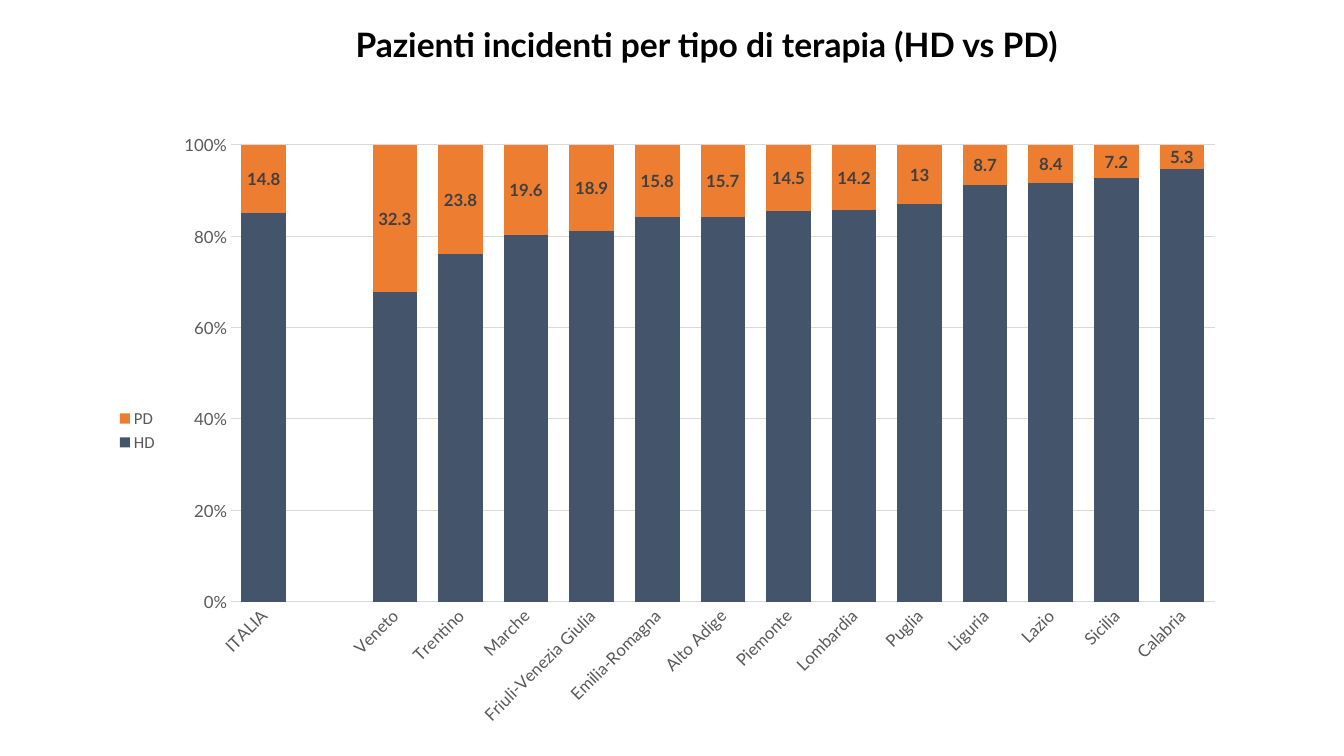
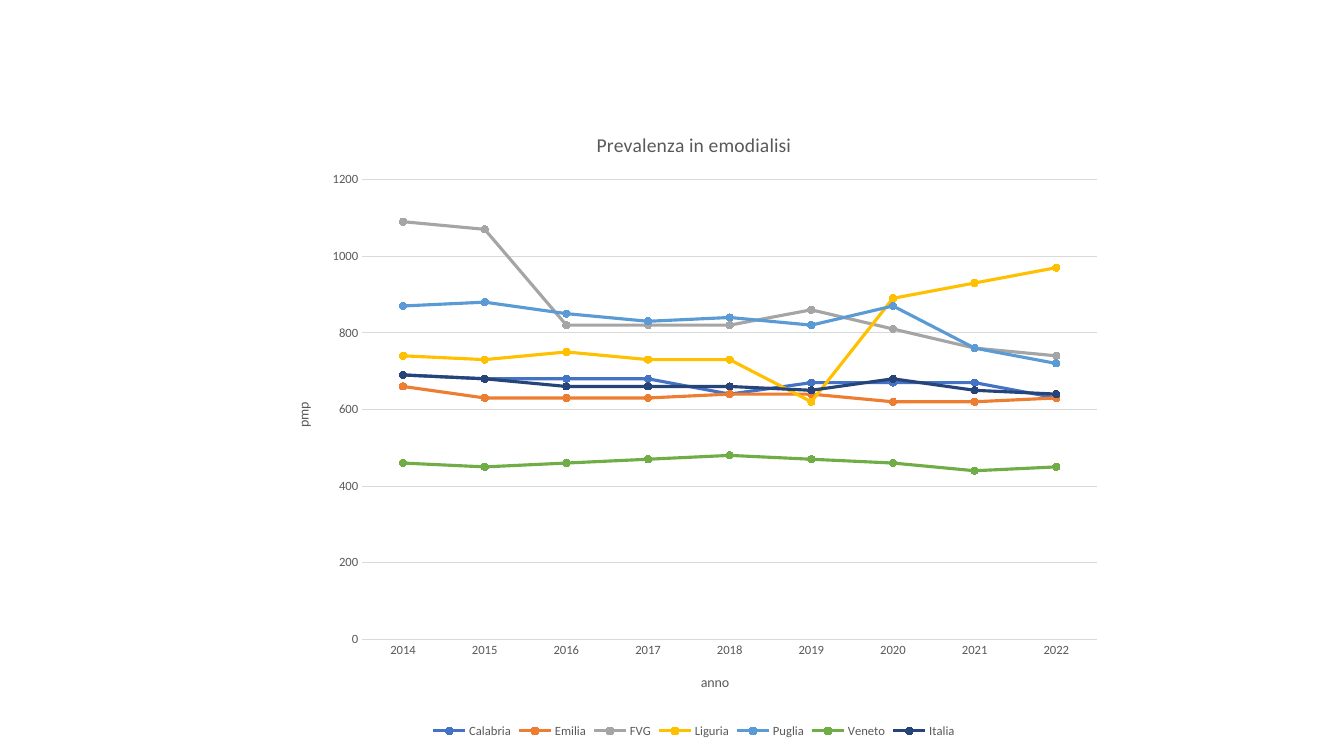
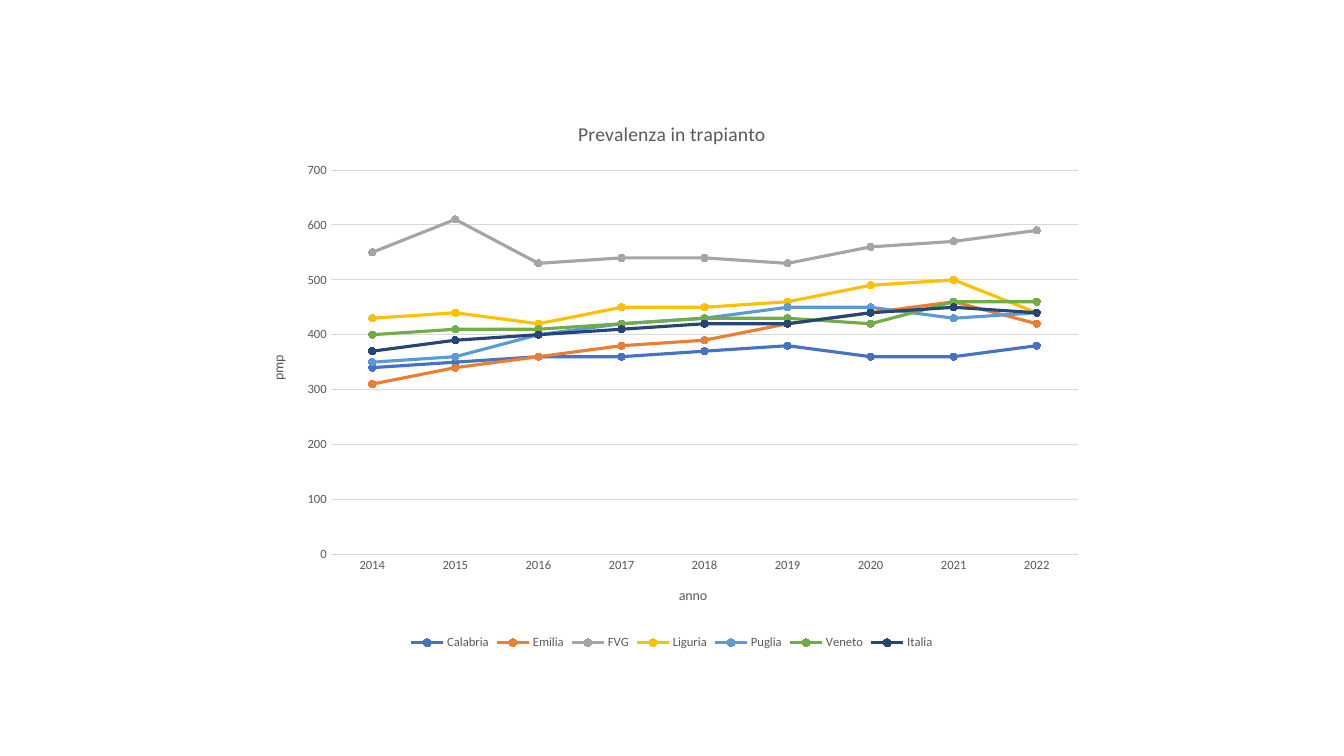
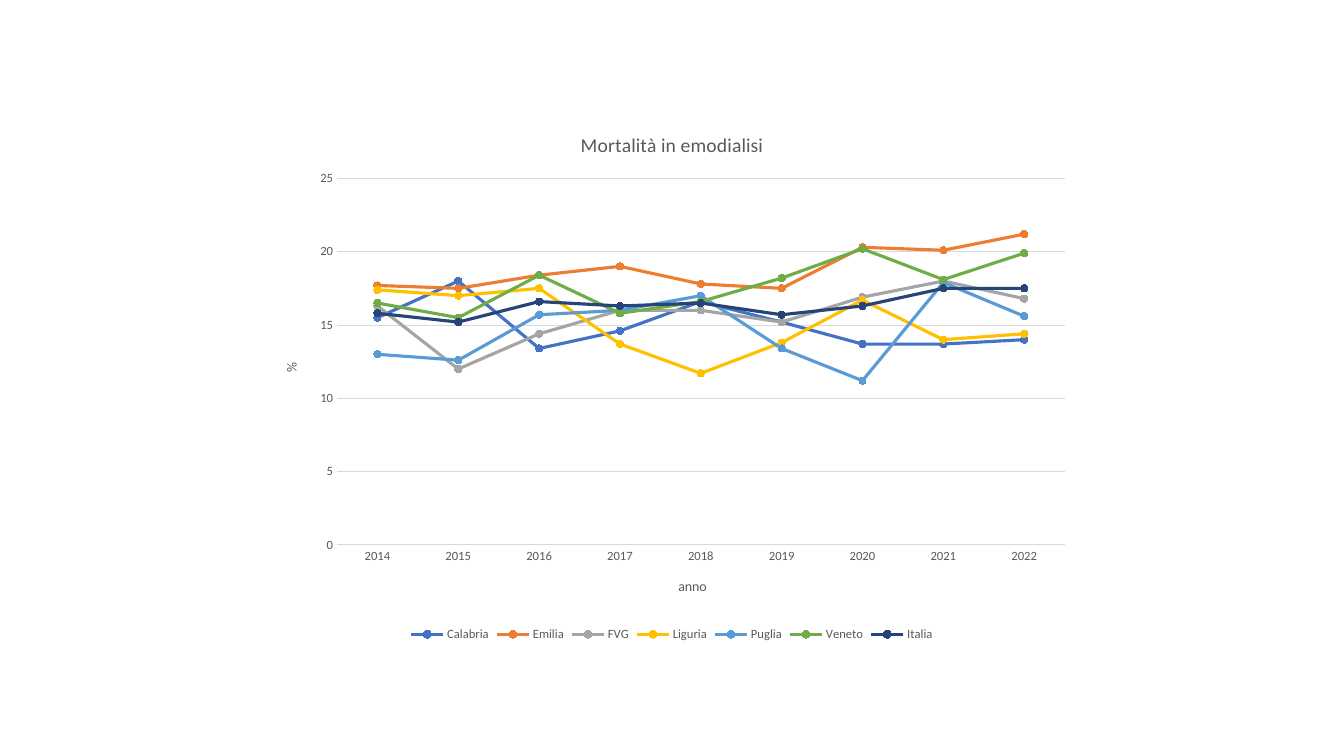
from lxml import etree
from pptx import Presentation
from pptx.chart.data import CategoryChartData
from pptx.dml.color import RGBColor
from pptx.enum.chart import XL_CHART_TYPE, XL_LEGEND_POSITION, XL_MARKER_STYLE, XL_TICK_MARK
from pptx.enum.text import MSO_AUTO_SIZE, PP_ALIGN
from pptx.oxml.ns import qn
from pptx.util import Emu, Pt

STACKED = XL_CHART_TYPE.COLUMN_STACKED_100
LINES = XL_CHART_TYPE.LINE_MARKERS
LEFT, BOTTOM = XL_LEGEND_POSITION.LEFT, XL_LEGEND_POSITION.BOTTOM
CIRCLE = XL_MARKER_STYLE.CIRCLE
NO_TICK = XL_TICK_MARK.NONE
GROW = MSO_AUTO_SIZE.SHAPE_TO_FIT_TEXT
ALIGN_LEFT = PP_ALIGN.LEFT

PX = 9525
TITLE_ONLY, BLANK = 5, 6
COLORS = {
    "title": "000000", "text": "595959", "label": "404040", "grid": "D9D9D9",
    "HD": "44546A", "PD": "ED7D31",
    "Calabria": "4472C4", "Emilia": "ED7D31", "FVG": "A5A5A5", "Liguria": "FFC000",
    "Puglia": "5B9BD5", "Veneto": "70AD47", "Italia": "264478",
}
YEARS = [str(year) for year in range(2014, 2023)]
AREAS = ["ITALIA", "", "Veneto", "Trentino", "Marche", "Friuli-Venezia Giulia",
         "Emilia-Romagna", "Alto Adige", "Piemonte", "Lombardia", "Puglia",
         "Liguria", "Lazio", "Sicilia", "Calabria"]
THERAPIES = {
    "HD": [85, None, 68, 76, 80, 81, 84, 84, 86, 86, 87, 91, 92, 93, 95],
    "PD": [14.8, None, 32.3, 23.8, 19.6, 18.9, 15.8, 15.7, 14.5, 14.2, 13, 8.7, 8.4, 7.2, 5.3],
}
DIALYSIS = {
    "Calabria": [690, 680, 680, 680, 640, 670, 670, 670, 630],
    "Emilia": [660, 630, 630, 630, 640, 640, 620, 620, 630],
    "FVG": [1090, 1070, 820, 820, 820, 860, 810, 760, 740],
    "Liguria": [740, 730, 750, 730, 730, 620, 890, 930, 970],
    "Puglia": [870, 880, 850, 830, 840, 820, 870, 760, 720],
    "Veneto": [460, 450, 460, 470, 480, 470, 460, 440, 450],
    "Italia": [690, 680, 660, 660, 660, 650, 680, 650, 640],
}
TRANSPLANT = {
    "Calabria": [340, 350, 360, 360, 370, 380, 360, 360, 380],
    "Emilia": [310, 340, 360, 380, 390, 420, 440, 460, 420],
    "FVG": [550, 610, 530, 540, 540, 530, 560, 570, 590],
    "Liguria": [430, 440, 420, 450, 450, 460, 490, 500, 440],
    "Puglia": [350, 360, 400, 420, 430, 450, 450, 430, 440],
    "Veneto": [400, 410, 410, 420, 430, 430, 420, 460, 460],
    "Italia": [370, 390, 400, 410, 420, 420, 440, 450, 440],
}
MORTALITY = {
    "Calabria": [15.5, 18, 13.4, 14.6, 16.6, 15.2, 13.7, 13.7, 14],
    "Emilia": [17.7, 17.5, 18.4, 19, 17.8, 17.5, 20.3, 20.1, 21.2],
    "FVG": [16.3, 12, 14.4, 16, 16, 15.2, 16.9, 18, 16.8],
    "Liguria": [17.4, 17, 17.5, 13.7, 11.7, 13.8, 16.7, 14, 14.4],
    "Puglia": [13, 12.6, 15.7, 16, 17, 13.4, 11.2, 17.9, 15.6],
    "Veneto": [16.5, 15.5, 18.4, 15.8, 16.6, 18.2, 20.2, 18.1, 19.9],
    "Italia": [15.8, 15.2, 16.6, 16.3, 16.5, 15.7, 16.3, 17.5, 17.5],
}


def color(name):
    """Return the named colour."""
    return RGBColor.from_string(COLORS[name])


class ChartDeck:
    """Hold the shared style and the current slide."""

    def __init__(self, width, height):
        """Start an empty deck of the given size."""
        self.deck = Presentation()
        self.deck.slide_width, self.deck.slide_height = Emu(width * PX), Emu(height * PX)
        self.slide = None

    def add_slide(self, layout):
        """Add a slide and make it current."""
        self.slide = self.deck.slides.add_slide(self.deck.slide_layouts[layout])

    def style_font(self, font, size, tone="text", face="Calibri", bold=False):
        """Set every property of a font."""
        font.name, font.size, font.bold = face, Pt(size), bold
        font.color.rgb = color(tone)

    def title(self, text, left, top, width, height):
        """Fill and place the title placeholder."""
        box = self.slide.shapes.title
        box.left, box.top, box.width, box.height = (
            Emu(length * PX) for length in (left, top, width, height))
        frame = box.text_frame
        frame.text = text
        frame.word_wrap, frame.auto_size = False, GROW
        paragraph = frame.paragraphs[0]
        paragraph.alignment = ALIGN_LEFT
        self.style_font(paragraph.font, 24, "title", "Lato", True)

    def chart(self, kind, box, plot, categories, values, legend, legend_size):
        """Add a chart with its legend and plot area in place."""
        data = CategoryChartData()
        data.categories = categories
        for name, numbers in values.items():
            data.add_series(name, numbers)
        chart = self.slide.shapes.add_chart(
            kind, *(Emu(length * PX) for length in box), data).chart
        self.style_font(chart.font, 10, "title")
        chart.has_title = False
        chart.has_legend = True
        chart.legend.position = legend
        chart.legend.include_in_layout = False
        self.style_font(chart.legend.font, legend_size)
        chart.plots[0].vary_by_categories = False
        self.place_plot(chart, box, plot)
        return chart

    def place_plot(self, chart, box, plot):
        """Fix the inner plot area as fractions of the chart box."""
        area = chart.element.xpath("//c:plotArea")[0]
        for old in area.findall(qn("c:layout")):
            area.remove(old)
        layout = etree.Element(qn("c:layout"))
        area.insert(0, layout)
        manual = etree.SubElement(layout, qn("c:manualLayout"))
        left, top, width, height = box
        settings = {
            "layoutTarget": "inner", "xMode": "edge", "yMode": "edge",
            "x": (plot[0] - left) / width, "y": (plot[1] - top) / height,
            "w": plot[2] / width, "h": plot[3] / height,
        }
        for tag, value in settings.items():
            etree.SubElement(manual, qn("c:" + tag)).set("val", str(value))

    def axes(self, chart, size, face, step, number_format):
        """Style both axes and the gridlines."""
        for axis in (chart.category_axis, chart.value_axis):
            axis.major_tick_mark = axis.minor_tick_mark = NO_TICK
            self.style_font(axis.tick_labels.font, size, face=face)
        values = chart.value_axis
        values.minimum_scale, values.major_unit = 0, step
        values.tick_labels.number_format = number_format
        values.tick_labels.number_format_is_linked = False
        values.format.line.fill.background()
        values.has_major_gridlines = True
        for line in (chart.category_axis.format.line, values.major_gridlines.format.line):
            line.color.rgb, line.width = color("grid"), Pt(0.75)

    def caption(self, title, text, size):
        """Write a chart or axis title."""
        title.text_frame.text = text
        self.style_font(title.text_frame.paragraphs[0].font, size)

    def stacked_chart(self, box, plot, categories, values, labelled):
        """Add a full-height stacked column chart with one labelled series."""
        chart = self.chart(STACKED, box, plot, categories, values, LEFT, 12)
        self.axes(chart, 12, "Lato", 0.2, "0%")
        chart.element.xpath("//c:catAx/c:txPr/a:bodyPr")[0].set("rot", "-2700000")
        bars = chart.plots[0]
        bars.gap_width, bars.overlap = 47, 100
        for series in bars.series:
            series.format.fill.solid()
            series.format.fill.fore_color.rgb = color(series.name)
            if series.name == labelled:
                series.data_labels.show_value = True
                self.style_font(series.data_labels.font, 12, "label", "Lato", True)

    def line_chart(self, title, unit, box, plot, values, maximum, step):
        """Add a yearly line chart with one line per region."""
        chart = self.chart(LINES, box, plot, YEARS, values, BOTTOM, 9)
        self.axes(chart, 9, "Calibri", step, "General")
        chart.value_axis.maximum_scale = maximum
        self.caption(chart.chart_title, title, 14)
        self.caption(chart.category_axis.axis_title, "anno", 10)
        self.caption(chart.value_axis.axis_title, unit, 10)
        chart.element.xpath("//c:valAx/c:title//a:bodyPr")[0].set("rot", "-5400000")
        for series in chart.plots[0].series:
            tone = color(series.name)
            series.smooth = False
            series.format.line.color.rgb, series.format.line.width = tone, Pt(2.25)
            marker = series.marker
            marker.style, marker.size = CIRCLE, 5
            marker.format.fill.solid()
            marker.format.fill.fore_color.rgb = tone
            marker.format.line.color.rgb = tone


def main():
    """Build and save the deck."""
    charts = ChartDeck(1280, 720)
    charts.add_slide(TITLE_ONLY)
    charts.title("Pazienti incidenti per tipo di terapia (HD vs PD)", 329, 18, 696, 48)
    charts.stacked_chart((101, 117, 1078, 586), (220, 138, 937, 435), AREAS, THERAPIES, "PD")
    trends = [
        ("Prevalenza in emodialisi", "pmp", (261, 104, 800, 603), (345, 171, 700, 438),
         DIALYSIS, 1200, 200),
        ("Prevalenza in trapianto", "pmp", (237, 96, 806, 527), (315, 162, 712, 366),
         TRANSPLANT, 700, 100),
        ("Mortalità in emodialisi", "%", (250, 106, 780, 509), (321, 170, 693, 349),
         MORTALITY, 25, 5),
    ]
    for trend in trends:
        charts.add_slide(BLANK)
        charts.line_chart(*trend)
    charts.deck.save("out.pptx")


if __name__ == "__main__":
    main()
